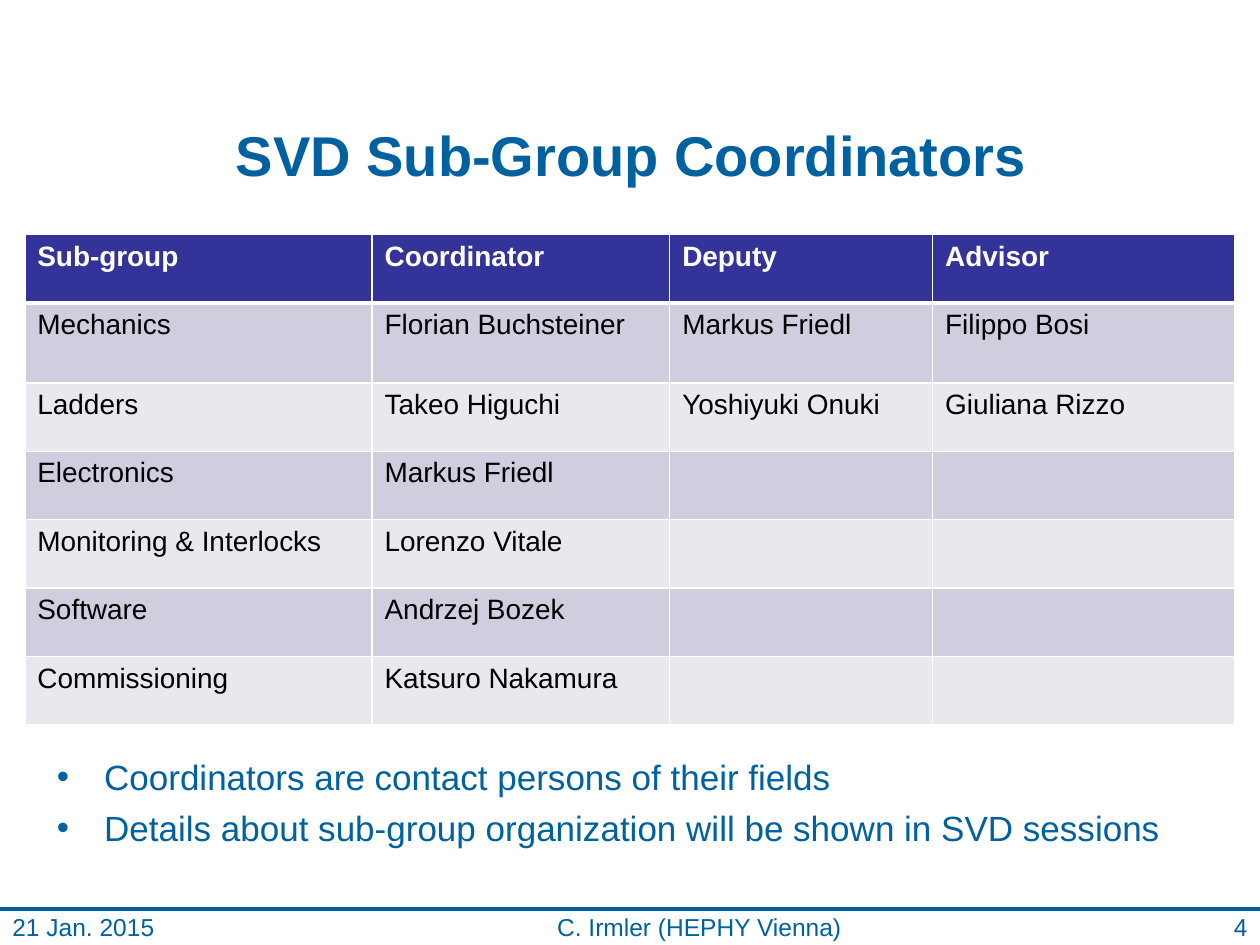
import dataclasses

import lxml.etree
import pptx
import pptx.dml.color
import pptx.enum.shapes
import pptx.enum.text
import pptx.oxml.ns
import pptx.util

Cm = pptx.util.Cm
Pt = pptx.util.Pt
ALIGN = pptx.enum.text.PP_ALIGN
ANCHOR = pptx.enum.text.MSO_ANCHOR


@dataclasses.dataclass(frozen=True)
class Theme:
    """Colours, font and type sizes of the slide."""
    font: str = "Arial"
    main: str = "0061A0"
    header: str = "333399"
    bands: tuple = ("CECEDE", "E8E8EF")
    light: str = "FFFFFF"
    dark: str = "000000"
    title_size: int = 32
    body_size: int = 20
    table_size: int = 16
    footer_size: int = 14


THEME = Theme()

COLUMN_WIDTHS = (7, 6, 5.3, 6.1)
ROW_HEIGHTS = (1.38, 1.61) + (1.38,) * 5
COORDINATORS = (
    ("Sub-group", "Coordinator", "Deputy", "Advisor"),
    ("Mechanics", "Florian Buchsteiner", "Markus Friedl", "Filippo Bosi"),
    ("Ladders", "Takeo Higuchi", "Yoshiyuki Onuki", "Giuliana Rizzo"),
    ("Electronics", "Markus Friedl", "", ""),
    ("Monitoring & Interlocks", "Lorenzo Vitale", "", ""),
    ("Software", "Andrzej Bozek", "", ""),
    ("Commissioning", "Katsuro Nakamura", "", ""),
)
NOTES = (
    "Coordinators are contact persons of their fields",
    "Details about sub-group organization will be shown in SVD sessions",
)


def rgb(color):
    """Turn a hex string into a colour."""
    return pptx.dml.color.RGBColor.from_string(color)


def sub(parent, tag, **attrs):
    """Append a namespaced XML child."""
    return lxml.etree.SubElement(parent, pptx.oxml.ns.qn(tag), attrs)


def style_font(font, size, color, bold=False):
    """Apply the theme font with a size, colour and weight."""
    formats = {"name": THEME.font, "size": Pt(size), "bold": bold}
    for name, value in formats.items():
        setattr(font, name, value)
    font.color.rgb = rgb(color)


def add_text(s, box, text, size, align=ALIGN.LEFT, bold=False):
    """Place one line of text, centred vertically in its box."""
    tf = s.shapes.add_textbox(*map(Cm, box)).text_frame
    formats = {"word_wrap": True, "vertical_anchor": ANCHOR.MIDDLE}
    for name, value in formats.items():
        setattr(tf, name, value)
    p = tf.paragraphs[0]
    p.alignment = align
    r = p.add_run()
    r.text = text
    style_font(r.font, size, THEME.main, bold)


def set_borders(cell, bottom):
    """Draw light borders round a cell, with its own bottom width."""
    tc_pr = cell._tc.get_or_add_tcPr()
    widths = {"a:lnL": 1, "a:lnR": 1, "a:lnT": 1, "a:lnB": bottom}
    for tag, width in widths.items():
        ln = sub(tc_pr, tag, w=str(Pt(width)))
        sub(sub(ln, "a:solidFill"), "a:srgbClr", val=THEME.light)


def add_coordinators(s, box):
    """Build the banded table of coordinators."""
    table = s.shapes.add_table(
        len(ROW_HEIGHTS), len(COLUMN_WIDTHS), *map(Cm, box)).table
    for column, width in zip(table.columns, COLUMN_WIDTHS):
        column.width = Cm(width)
    for i, (row, height, texts) in enumerate(
            zip(table.rows, ROW_HEIGHTS, COORDINATORS)):
        row.height = Cm(height)
        is_header = i == 0
        fill = THEME.header if is_header else THEME.bands[(i - 1) % 2]
        color = THEME.light if is_header else THEME.dark
        for cell, text in zip(row.cells, texts):
            set_borders(cell, 3 if is_header else 1)
            cell.fill.solid()
            cell.fill.fore_color.rgb = rgb(fill)
            cell.text = text
            style_font(cell.text_frame.paragraphs[0].font,
                       THEME.table_size, color, is_header)


def add_notes(s, box):
    """Place the bulleted notes."""
    tf = s.shapes.add_textbox(*map(Cm, box)).text_frame
    tf.word_wrap = True
    for i, text in enumerate(NOTES):
        p = tf.add_paragraph() if i else tf.paragraphs[0]
        p_pr = p._p.get_or_add_pPr()
        indent = Cm(0.95)
        p_pr.set("marL", str(indent))
        p_pr.set("indent", str(-indent))
        sub(p_pr, "a:buFont", typeface=THEME.font)
        sub(p_pr, "a:buChar", char="•")
        if i:
            p.space_before = Pt(5)
        r = p.add_run()
        r.text = text
        style_font(r.font, THEME.body_size, THEME.main)


def add_footer(s, box):
    """Draw the rule with the date, author and page number below it."""
    left, top, width, height = box
    rule = s.shapes.add_connector(
        pptx.enum.shapes.MSO_CONNECTOR.STRAIGHT,
        Cm(left), Cm(top), Cm(left + width), Cm(top))
    rule.line.width = Pt(2)
    rule.line.color.rgb = rgb(THEME.main)
    sub(rule._element.spPr, "a:effectLst")
    parts = (
        (0, 10.1, "21 Jan. 2015", ALIGN.LEFT),
        (9.9, 8.4, "C. Irmler (HEPHY Vienna)", ALIGN.CENTER),
        (width - 2.92, 2.92, "4", ALIGN.RIGHT),
    )
    for x, w, text, align in parts:
        add_text(s, (left + x, top, w, height), text,
                 THEME.footer_size, align)


def main():
    """Build and save the slide."""
    prs = pptx.Presentation()
    prs.slide_width, prs.slide_height = Cm(25.4), Cm(19.05)
    s = prs.slides.add_slide(prs.slide_layouts[6])
    add_text(s, (1.3, 2.31, 22.86, 1.6), "SVD Sub-Group Coordinators",
             THEME.title_size, ALIGN.CENTER, bold=True)
    add_coordinators(s, (0.5, 4.73, sum(COLUMN_WIDTHS), sum(ROW_HEIGHTS)))
    add_notes(s, (0.9, 15.11, 24.2, 2.6))
    add_footer(s, (0, 18.33, 25.4, 0.72))
    prs.save("out.pptx")


if __name__ == "__main__":
    main()
